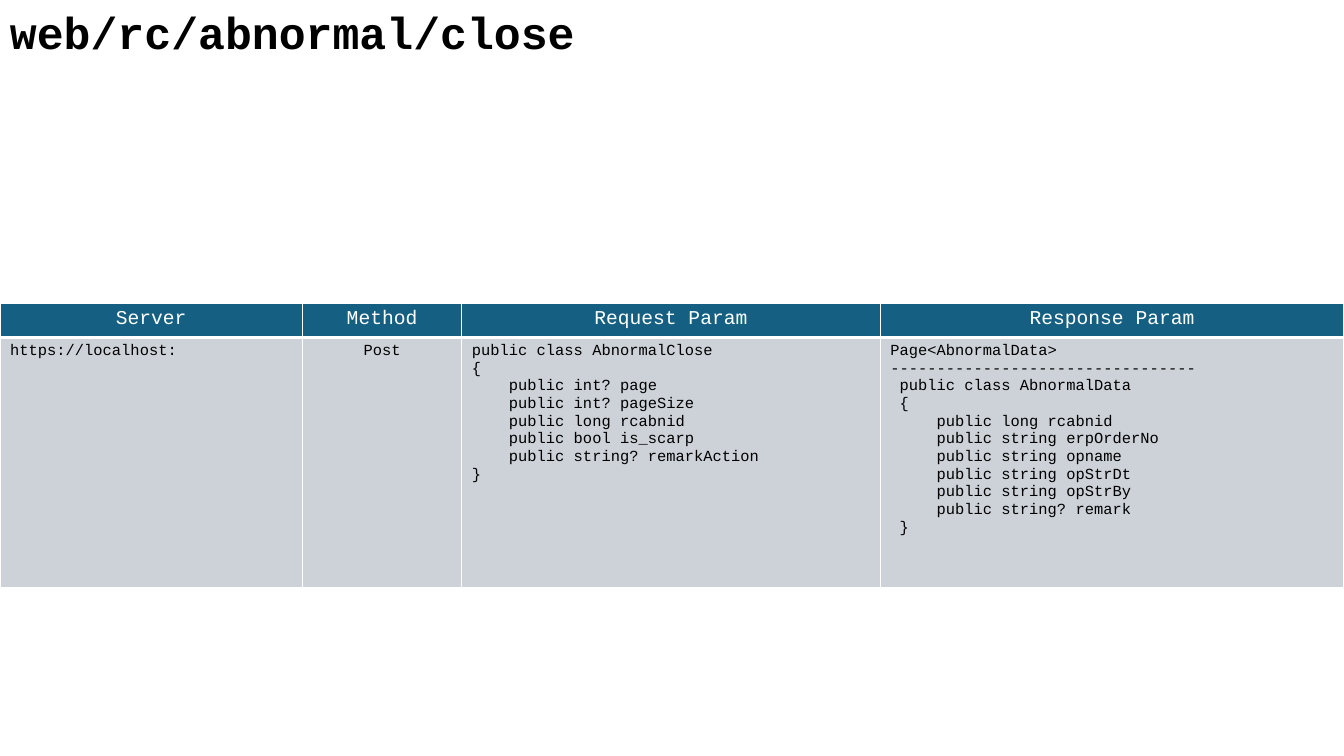
from lxml import etree
from pptx import Presentation
from pptx.dml.color import RGBColor
from pptx.enum.text import MSO_AUTO_SIZE, PP_ALIGN
from pptx.oxml.ns import qn
from pptx.util import Inches, Pt

LEFT, MID = PP_ALIGN.LEFT, PP_ALIGN.CENTER
GROW = MSO_AUTO_SIZE.SHAPE_TO_FIT_TEXT
FONT = "Courier New"
WIDE, HIGH = 13.33, 7.5
WHITE, BLACK, TEAL, GREY = "FFFFFF", "000000", "156082", "CCD2D8"


def color(code):
    return RGBColor.from_string(code)


def write(frame, text, size=11, ink=BLACK, bold=False, align=LEFT):
    for i, line in enumerate(text.split("\n")):
        para = frame.add_paragraph() if i else frame.paragraphs[0]
        para.alignment = align
        run = para.add_run()
        run.text = line
        run.font.name = FONT
        run.font.size = Pt(size)
        run.font.bold = bold
        run.font.color.rgb = color(ink)


REQUEST = """public class AbnormalClose
{
    public int? page
    public int? pageSize
    public long rcabnid
    public bool is_scarp
    public string? remarkAction
}"""

RESPONSE = """Page<AbnormalData>
---------------------------------
 public class AbnormalData
 {
     public long rcabnid
     public string erpOrderNo
     public string opname
     public string opStrDt
     public string opStrBy
     public string? remark
 }"""

COLS = [
    (3, "Server", "https://localhost:", LEFT),
    (1.58, "Method", "Post", MID),
    (4.15, "Request Param", REQUEST, LEFT),
    (4.6, "Response Param", RESPONSE, LEFT),
]
ROWS = [0.34, 2.48]

deck = Presentation()
deck.slide_width, deck.slide_height = Inches(WIDE), Inches(HIGH)
slide = deck.slides.add_slide(deck.slide_layouts[6])

title = slide.shapes.add_textbox(0, 0, Inches(9.45), Inches(0.64)).text_frame
title.word_wrap = True
title.auto_size = GROW
write(title, "web/rc/abnormal/close", size=32, bold=True)

table = slide.shapes.add_table(
    len(ROWS), len(COLS), 0, Inches(3.01), Inches(WIDE), Inches(sum(ROWS))
).table
for row, high in zip(table.rows, ROWS):
    row.height = Inches(high)

for c, (wide, head, body, align) in enumerate(COLS):
    table.columns[c].width = Inches(wide)
    top, low = table.cell(0, c), table.cell(1, c)
    write(top.text_frame, head, size=14, ink=WHITE, align=MID)
    write(low.text_frame, body, align=align)
    for cell, fill, base in ((top, TEAL, 3), (low, GREY, 1)):
        props = cell._tc.get_or_add_tcPr()
        for side, width in (("L", 1), ("R", 1), ("T", 1), ("B", base)):
            edge = etree.SubElement(props, qn("a:ln" + side), w=str(Pt(width)))
            solid = etree.SubElement(edge, qn("a:solidFill"))
            etree.SubElement(solid, qn("a:srgbClr"), val=WHITE)
        cell.fill.solid()
        cell.fill.fore_color.rgb = color(fill)

deck.save("out.pptx")
